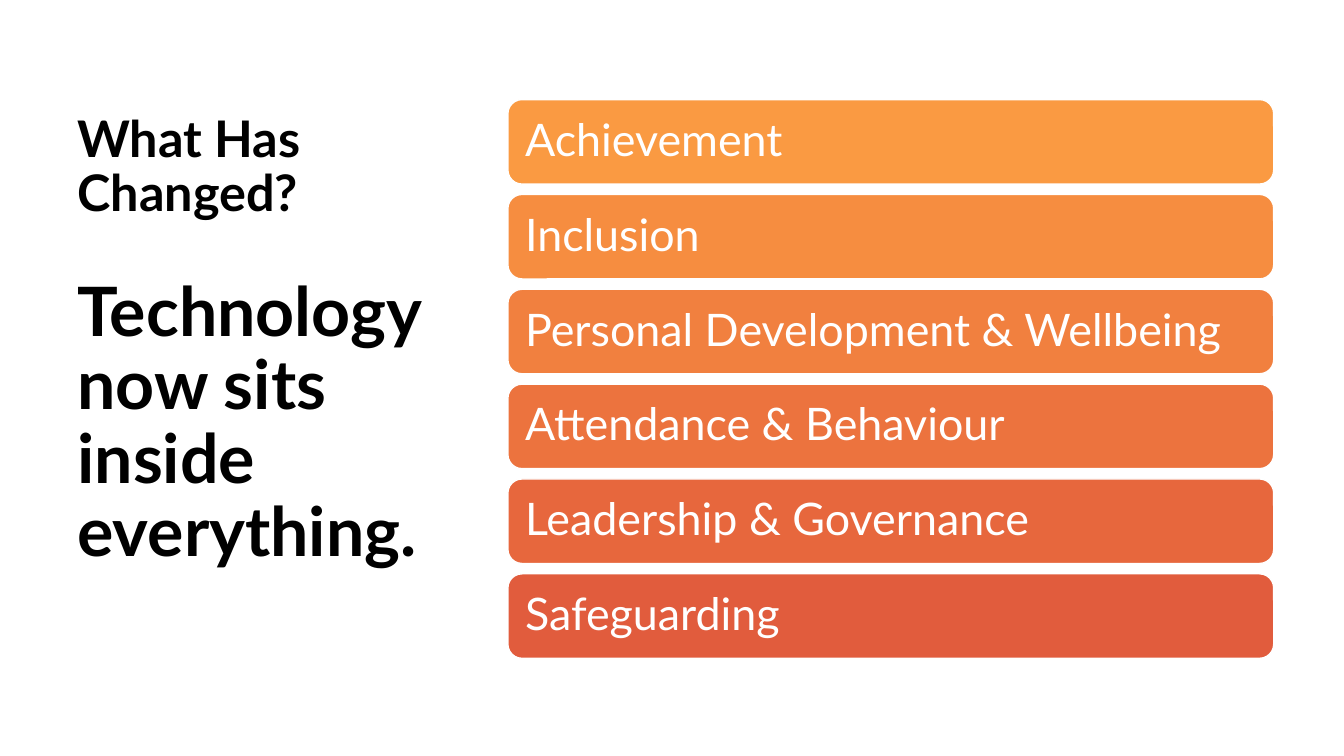
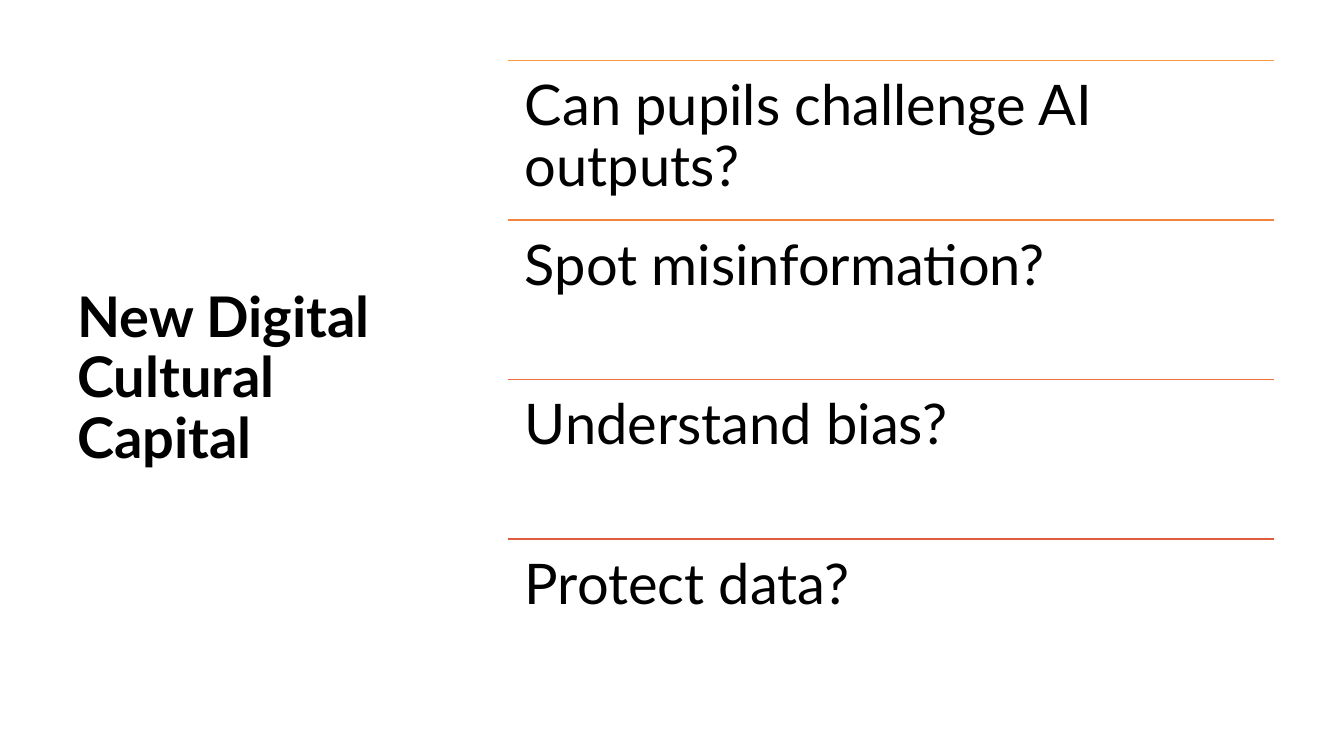
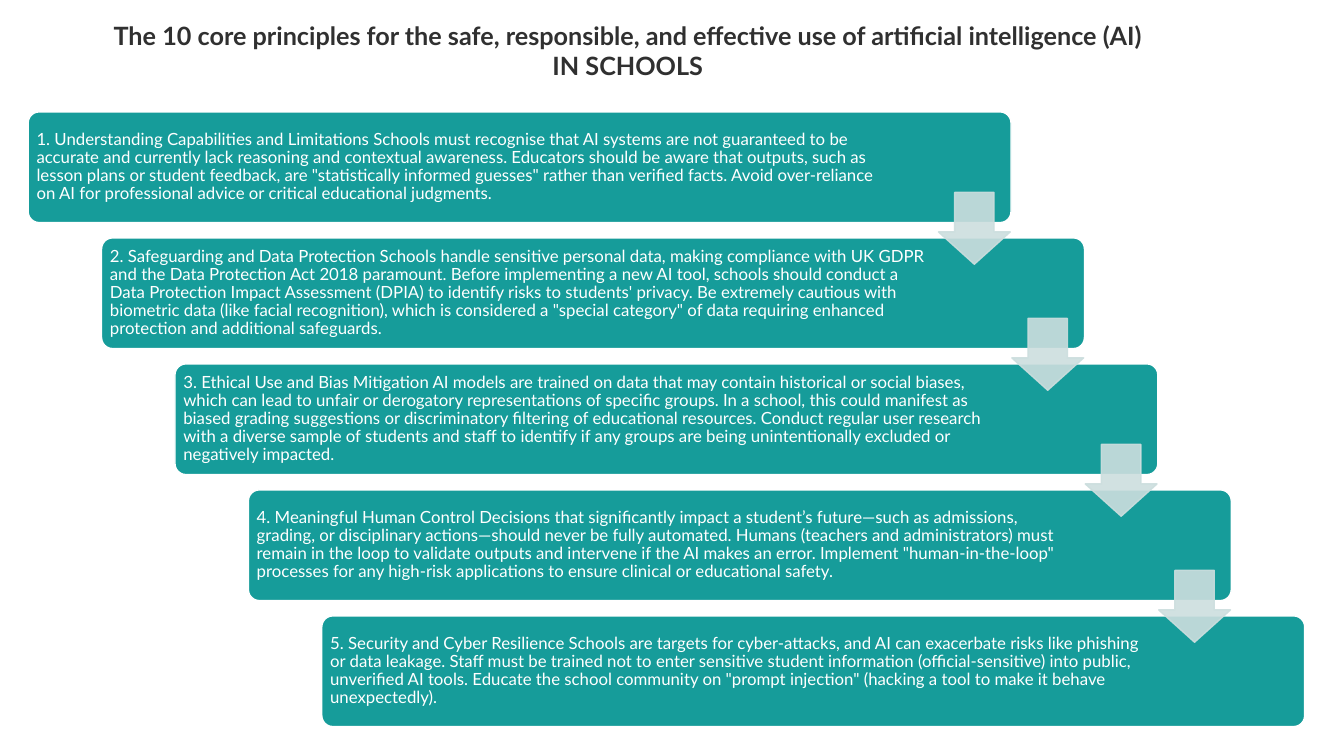
from lxml import etree
from pptx import Presentation
from pptx.dml.color import RGBColor
from pptx.enum import shapes, text
from pptx.oxml.ns import qn
from pptx.util import Cm, Pt

FONT = "Lato"
COLORS = {
    "white": "FFFFFF", "black": "000000", "charcoal": "303030",
    "teal": "169C9A", "mist": "CCDEDE",
    "amber": "FA9A42", "apricot": "F68D40", "tangerine": "F28440",
    "orange": "F1803F", "coral": "EC733E", "salmon": "EA6F3E",
    "rust": "E7673D", "red": "E15C3D",
}
COLUMN_LEFT, COLUMN_WIDTH = 12.8, 19.3

AREAS = [
    ("Achievement", "amber"),
    ("Inclusion", "apricot"),
    ("Personal Development & Wellbeing", "orange"),
    ("Attendance & Behaviour", "coral"),
    ("Leadership & Governance", "rust"),
    ("Safeguarding", "red"),
]
QUESTIONS = [
    ("Can pupils challenge AI outputs?", "amber"),
    ("Spot misinformation?", "tangerine"),
    ("Understand bias?", "salmon"),
    ("Protect data?", "red"),
]
PRINCIPLES = [
    "1. Understanding Capabilities and Limitations Schools must recognise that AI systems are not "
    "guaranteed to be accurate and currently lack reasoning and contextual awareness. Educators "
    "should be aware that outputs, such as lesson plans or student feedback, are \"statistically "
    "informed guesses\" rather than verified facts. Avoid over-reliance on AI for professional "
    "advice or critical educational judgments.",
    "2. Safeguarding and Data Protection Schools handle sensitive personal data, making compliance "
    "with UK GDPR and the Data Protection Act 2018 paramount. Before implementing a new AI tool, "
    "schools should conduct a Data Protection Impact Assessment (DPIA) to identify risks to "
    "students' privacy. Be extremely cautious with biometric data (like facial recognition), which "
    "is considered a \"special category\" of data requiring enhanced protection and additional "
    "safeguards.",
    "3. Ethical Use and Bias Mitigation AI models are trained on data that may contain historical "
    "or social biases, which can lead to unfair or derogatory representations of specific groups. "
    "In a school, this could manifest as biased grading suggestions or discriminatory filtering of "
    "educational resources. Conduct regular user research with a diverse sample of students and "
    "staff to identify if any groups are being unintentionally excluded or negatively impacted.",
    "4. Meaningful Human Control Decisions that significantly impact a student’s future—such as "
    "admissions, grading, or disciplinary actions—should never be fully automated. Humans (teachers "
    "and administrators) must remain in the loop to validate outputs and intervene if the AI makes "
    "an error. Implement \"human-in-the-loop\" processes for any high-risk applications to ensure "
    "clinical or educational safety.",
    "5. Security and Cyber Resilience Schools are targets for cyber-attacks, and AI can exacerbate "
    "risks like phishing or data leakage. Staff must be trained not to enter sensitive student "
    "information (official-sensitive) into public, unverified AI tools. Educate the school "
    "community on \"prompt injection\" (hacking a tool to make it behave unexpectedly).",
]


def rgb(name):
    """Return the named colour."""
    return RGBColor.from_string(COLORS[name])


def style(p, size, color, bold=False, align=text.PP_ALIGN.LEFT, spacing=0.9):
    """Format one paragraph."""
    p.alignment = align
    p.line_spacing = spacing
    p.font.name = FONT
    p.font.size = Pt(size)
    p.font.bold = bold
    p.font.color.rgb = rgb(color)


def set_frame(tf, anchor, inset, right=None):
    """Set wrapping, anchor and insets of a text frame."""
    tf.word_wrap = True
    tf.auto_size = text.MSO_AUTO_SIZE.NONE
    tf.vertical_anchor = anchor
    tf.margin_left = tf.margin_top = tf.margin_bottom = Cm(inset)
    tf.margin_right = Cm(inset if right is None else right)


def add_titled_slide(prs, box, lines, color="black", anchor=text.MSO_ANCHOR.MIDDLE, **kw):
    """Add a slide whose title holds the given (text, size) lines."""
    slide = prs.slides.add_slide(prs.slide_layouts.get_by_name("Title Only"))
    title = slide.shapes.title
    title.left, title.top, title.width, title.height = map(Cm, box)
    tf = title.text_frame
    tf.text = "\n".join(line for line, _ in lines)
    set_frame(tf, anchor, 0.25)
    tf.margin_top = tf.margin_bottom = Cm(0.13)
    for p, (_, size) in zip(tf.paragraphs, lines):
        style(p, size, color, bold=True, **kw)
    return slide


def add_shape(slide, kind, box, color, line):
    """Add a filled, outlined shape without shadow."""
    sp = slide.shapes.add_shape(kind, *map(Cm, box))
    sp.shadow.inherit = False
    sp.fill.solid()
    sp.fill.fore_color.rgb = rgb(color)
    sp.line.color.rgb = rgb(line)
    sp.line.width = Pt(1)
    return sp


def add_bar(slide, box, label, color, size, inset, right=None):
    """Add a rounded bar with left-aligned white text."""
    sp = add_shape(slide, shapes.MSO_SHAPE.ROUNDED_RECTANGLE, box, color, "white")
    sp.text_frame.text = label
    set_frame(sp.text_frame, text.MSO_ANCHOR.MIDDLE, inset, right)
    style(sp.text_frame.paragraphs[0], size, "white")
    return sp


def add_arrow(slide, left, top):
    """Add a translucent down arrow."""
    sp = add_shape(slide, shapes.MSO_SHAPE.DOWN_ARROW, (left, top, 1.81, 1.81), "mist", "mist")
    sp.adjustments[0] = 0.55
    sp.adjustments[1] = 0.45
    for clr in sp.element.spPr.iter(qn("a:srgbClr")):
        etree.SubElement(clr, qn("a:alpha"), val="90000")


def add_rule(slide, top, color):
    """Add a thin line across the right column."""
    line = slide.shapes.add_connector(
        shapes.MSO_CONNECTOR.STRAIGHT,
        Cm(COLUMN_LEFT), Cm(top), Cm(COLUMN_LEFT + COLUMN_WIDTH), Cm(top))
    line.line.color.rgb = rgb(color)
    line.line.width = Pt(1)
    etree.SubElement(line.element.spPr, qn("a:effectLst"))


def add_question(slide, top, height, label, color):
    """Add a question below its rule."""
    add_rule(slide, top, color)
    sp = slide.shapes.add_textbox(*map(Cm, (COLUMN_LEFT, top, COLUMN_WIDTH, height)))
    sp.text_frame.text = label
    set_frame(sp.text_frame, text.MSO_ANCHOR.TOP, 0.43)
    style(sp.text_frame.paragraphs[0], 40, "black")


def build_changes(prs):
    """Build the slide on what has changed."""
    slide = add_titled_slide(prs, (1.7, 1.52, 10.64, 14.22), [
        ("What Has Changed?", 36), ("Technology now sits inside everything.", 48.6)])
    slide.shapes.title.text_frame.paragraphs[1].space_before = Pt(39)
    for i, (label, color) in enumerate(AREAS):
        add_bar(slide, (COLUMN_LEFT, 2.51 + 2.39 * i, COLUMN_WIDTH, 2.13), label, color, 32, 0.33)


def build_capital(prs):
    """Build the slide on digital cultural capital."""
    slide = add_titled_slide(prs, (1.7, 1.52, 9.7, 16.08), [("New Digital Cultural Capital", 40)])
    row = 4.02
    for i, (label, color) in enumerate(QUESTIONS):
        add_question(slide, 1.52 + row * i, row, label, color)


def build_principles(prs):
    """Build the staircase of principles."""
    slide = add_titled_slide(
        prs, (0.3, 0.38, 31.04, 1.8),
        [("The 10 core principles for the safe, responsible, and effective use of "
          "artificial intelligence (AI)", 18), ("IN SCHOOLS", 18)],
        "charcoal", text.MSO_ANCHOR.TOP, align=text.PP_ALIGN.CENTER, spacing=1.0)
    step_x, step_y = 1.85, 3.175
    for i, label in enumerate(PRINCIPLES):
        box = (0.71 + step_x * i, 2.82 + step_y * i, 24.77, 2.79)
        sp = add_bar(slide, box, label, "teal", 12, 0.13, 3.8 if i else 3.33)
        sp.adjustments[0] = 0.1
    for i in range(len(PRINCIPLES) - 1):
        add_arrow(slide, 23.65 + step_x * i, 4.85 + step_y * i)


def main():
    """Build and save the presentation."""
    prs = Presentation()
    prs.slide_width, prs.slide_height = Cm(33.87), Cm(19.05)
    build_changes(prs)
    build_capital(prs)
    build_principles(prs)
    prs.save("out.pptx")


if __name__ == "__main__":
    main()
